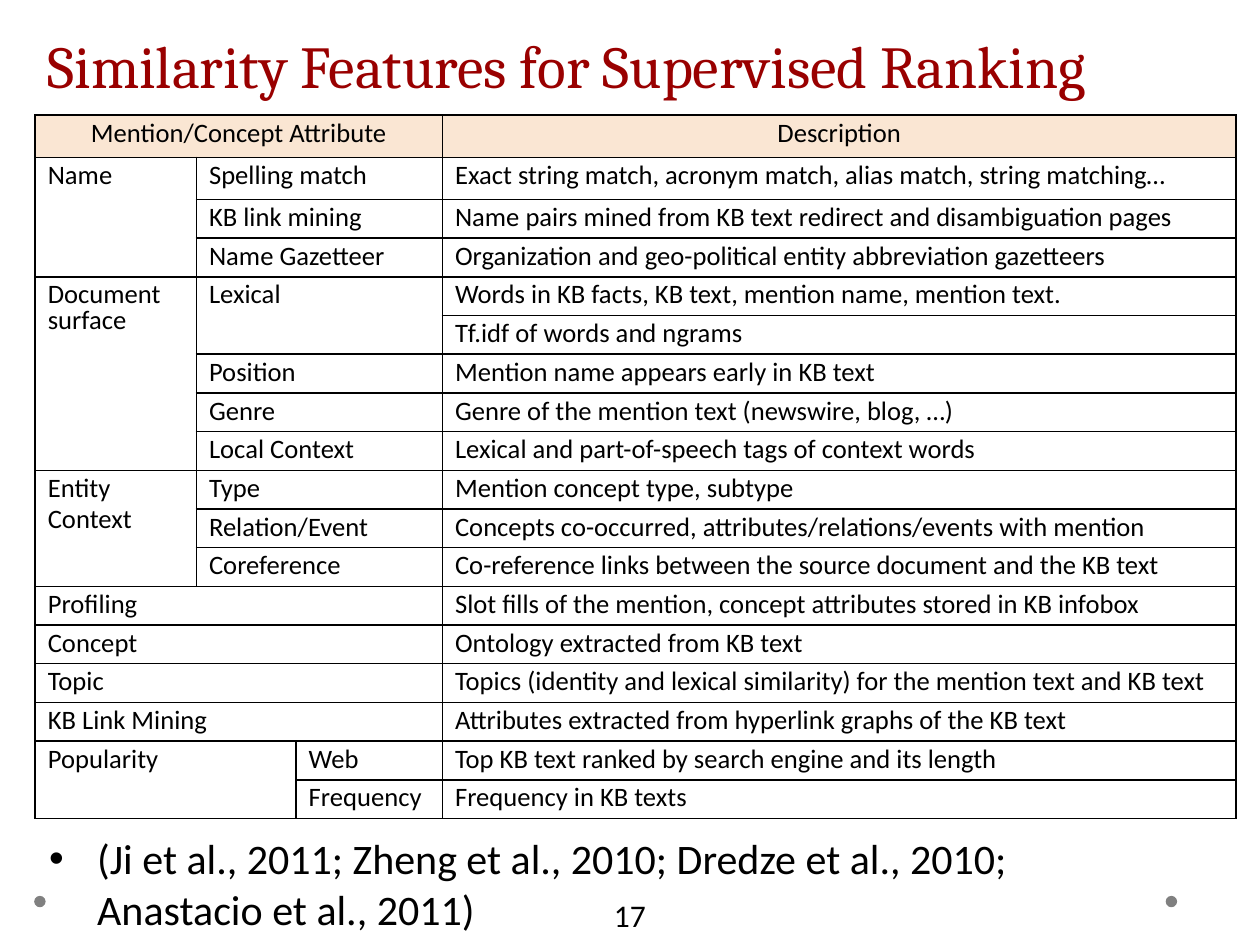
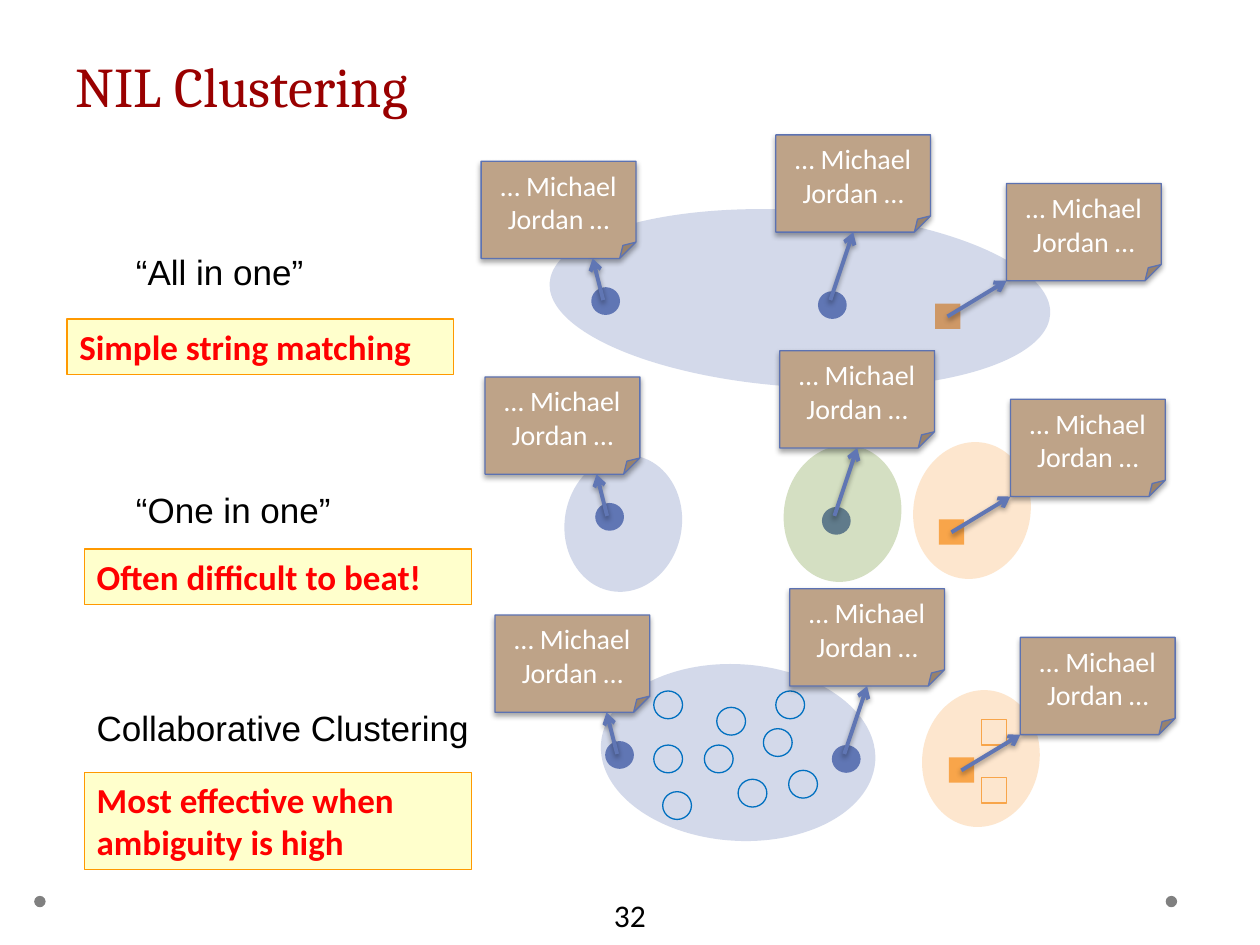
from dataclasses import dataclass
from itertools import takewhile

from lxml.etree import SubElement
from pptx import Presentation
from pptx.dml.color import RGBColor
from pptx.enum.shapes import MSO_CONNECTOR as Connector, MSO_SHAPE as Shape
from pptx.enum.text import MSO_ANCHOR as Anchor, MSO_AUTO_SIZE as AutoSize, PP_ALIGN as Align
from pptx.oxml.ns import qn
from pptx.util import Cm, Pt


@dataclass(frozen=True)
class Theme:
    title_font: str = "Cambria"
    body_font: str = "Calibri"
    label_font: str = "Arial"
    title: str = "990000"
    text: str = "000000"
    paper: str = "FFFFFF"
    dot: str = "808080"
    header: str = "FAE6D3"
    blue: str = "6076B4"
    orange: str = "F8A54A"
    green: str = "63891F"
    hollow: str = "0070C0"
    note: str = "BEA388"
    note_line: str = "5C72B2"
    callout: str = "FFFFCC"
    callout_line: str = "FF9900"
    callout_text: str = "FF0000"
    table_size: float = 15.2
    note_size: int = 16
    number_size: int = 18
    label_size: int = 20
    citation_size: int = 24
    thin: float = 0.75


THEME = Theme()
LEFT, UP = "<", "^"  # the cell joins its left or upper neighbour

FEATURES = [
    ("Mention/Concept Attribute", LEFT, LEFT, "Description"),
    ("Name", "Spelling match", LEFT, "Exact string match, acronym match, alias match, string matching…"),
    (UP, "KB link mining", LEFT, "Name pairs mined from KB text redirect and disambiguation pages"),
    (UP, "Name Gazetteer", LEFT, "Organization and geo-political entity abbreviation gazetteers"),
    ("Document surface", "Lexical", LEFT, "Words in KB facts, KB text, mention name, mention text."),
    (UP, UP, LEFT, "Tf.idf of words and ngrams"),
    (UP, "Position", LEFT, "Mention name appears early in KB text"),
    (UP, "Genre", LEFT, "Genre of the mention text (newswire, blog, …)"),
    (UP, "Local Context", LEFT, "Lexical and part-of-speech tags of context words"),
    ("Entity\nContext", "Type", LEFT, "Mention concept type, subtype"),
    (UP, "Relation/Event", LEFT, "Concepts co-occurred, attributes/relations/events with mention"),
    (UP, "Coreference", LEFT, "Co-reference links between the source document and the KB text"),
    ("Profiling", LEFT, LEFT, "Slot fills of the mention, concept attributes stored in KB infobox"),
    ("Concept", LEFT, LEFT, "Ontology extracted from KB text"),
    ("Topic", LEFT, LEFT, "Topics (identity and lexical similarity) for the mention text and KB text"),
    ("KB Link Mining", LEFT, LEFT, "Attributes extracted from hyperlink graphs of the KB text"),
    ("Popularity", LEFT, "Web", "Top KB text ranked by search engine and its length"),
    (UP, LEFT, "Frequency", "Frequency in KB texts"),
]
COLUMN_WIDTHS = (3.25, 2.01, 2.95, 16)

# Everything below is in cm from the top left corner of a scene.
NOTE_WIDTH, NOTE_HEIGHT = 3.12, 1.96
# note corner, arrow start, place of the arrow tip along the bottom of the note
NOTES = [
    ((0, 0.53), (2.46, 3.33), 0.72),
    ((5.94, 0), (7.04, 3.33), 0.5),
    ((10.59, 0.98), (9.4, 3.66), 0),
]
CIRCLE, SQUARE = (Shape.OVAL, 0.58, 0.56), (Shape.RECTANGLE, 0.51, 0.51)
MENTIONS = [
    (CIRCLE, (2.22, 3.07), THEME.blue),
    (CIRCLE, (6.79, 3.15), THEME.blue),
    (SQUARE, (9.15, 3.4), THEME.orange),
]
SMALL = (2.77, 2.36, 280.1)  # width, height, rotation of a one-entity cluster
ALL_IN_ONE = [((1.37, 1.52), (10.11, 3.56, 3.6), THEME.blue)]
ONE_IN_ONE = [
    ((8.43, 2.04), SMALL, THEME.orange),
    ((5.82, 2.1), SMALL, THEME.green),
    ((1.4, 2.3), SMALL, THEME.blue),
]
COLLABORATIVE = [
    ((8.41, 2.24), SMALL, THEME.orange),
    ((2.13, 1.52), (5.54, 3.56, 3.6), THEME.blue),
]
OTHER_CIRCLES = [(3.2, 2.06), (4.22, 3.15), (4.47, 2.39), (3.2, 3.15), (4.9, 3.84),
                 (5.41, 2.82), (5.66, 2.06), (5.92, 3.66), (3.38, 4.09)]
OTHER_SQUARES = [(9.8, 3.81), (9.8, 2.64)]
COLLABORATORS = ([(CIRCLE, place, THEME.hollow) for place in OTHER_CIRCLES]
                 + [(SQUARE, place, THEME.orange) for place in OTHER_SQUARES])


def rgb(color):
    return RGBColor.from_string(color)


def lengths(*values):
    return [Cm(value) for value in values]


def style_text(text_frame, size, font=THEME.body_font, color=THEME.text, bold=False, align=Align.LEFT):
    for paragraph in text_frame.paragraphs:
        paragraph.alignment = align
        for run in paragraph.runs:
            run.font.name, run.font.size, run.font.bold = font, Pt(size), bold
            run.font.color.rgb = rgb(color)


def add_figure(slide, kind, box, fill=None, line=None):
    shape = slide.shapes.add_shape(kind, *lengths(*box))
    shape.shadow.inherit = False
    if fill:
        shape.fill.solid()
        shape.fill.fore_color.rgb = rgb(fill)
    else:
        shape.fill.background()
    if line:
        shape.line.color.rgb = rgb(line)
        shape.line.width = Pt(THEME.thin)
    else:
        shape.line.fill.background()
    return shape


def add_text(slide, text, box, size, wrap=True, **style):
    text_frame = slide.shapes.add_textbox(*lengths(*box)).text_frame
    text_frame.word_wrap = wrap
    text_frame.text = text
    style_text(text_frame, size, **style)
    return text_frame


def drop_shadow(effects, distance, alpha):
    shadow = SubElement(effects, qn("a:outerShdw"), blurRad="40000", dist=str(distance),
                        dir="5400000", rotWithShape="0")
    color = SubElement(shadow, qn("a:srgbClr"), val="000000")
    SubElement(color, qn("a:alpha"), val=str(alpha * 1000))


def start_slide(presentation, title, title_box, title_size, number):
    """Add a slide with its title, the two corner dots and the page number."""
    slide = presentation.slides.add_slide(presentation.slide_layouts[5])
    placeholder = slide.shapes.title
    placeholder.left, placeholder.top, placeholder.width, placeholder.height = lengths(*title_box)
    text_frame = placeholder.text_frame
    text_frame.text = title
    text_frame.auto_size = AutoSize.NONE
    text_frame.vertical_anchor = Anchor.MIDDLE
    text_frame.paragraphs[0].line_spacing = Pt(58)
    style_text(text_frame, title_size, THEME.title_font, THEME.title)
    for left in (23.5, 0.69):
        add_figure(slide, Shape.OVAL, (left, 18.06, 0.23, 0.23), THEME.dot)
    add_text(slide, str(number), (11.43, 17.93, 2.54, 0.64), THEME.number_size, align=Align.CENTER)
    return slide


def add_borders(cell):
    properties = cell._tc.get_or_add_tcPr()
    for side in ("lnL", "lnR", "lnT", "lnB"):
        border = SubElement(properties, qn(f"a:{side}"), w=str(Pt(1)))
        fill = SubElement(border, qn("a:solidFill"))
        SubElement(fill, qn("a:srgbClr"), val=THEME.text)


def fill_cell(cell, text, header):
    cell.text = text
    style_text(cell.text_frame, THEME.table_size, align=Align.CENTER if header else Align.LEFT)
    for index, paragraph in enumerate(cell.text_frame.paragraphs):
        paragraph.line_spacing = 0.8
        if index:
            paragraph.space_before = Pt(3)


def merge_cell(table, row, column):
    """Join the cell with the LEFT and UP marks that follow it."""
    across = takewhile(lambda mark: mark == LEFT, FEATURES[row][column + 1:])
    down = takewhile(lambda cells: cells[column] == UP, FEATURES[row + 1:])
    last = table.cell(row + len(list(down)), column + len(list(across)))
    if last is not table.cell(row, column):
        table.cell(row, column).merge(last)


def add_feature_table(slide, left, top):
    tall, low = 0.85, 0.78
    heights = [tall] * 2 + [low] * (len(FEATURES) - 2)
    frame = slide.shapes.add_table(len(FEATURES), len(COLUMN_WIDTHS),
                                   *lengths(left, top, sum(COLUMN_WIDTHS), sum(heights)))
    table = frame.table
    table.first_row = table.horz_banding = False
    for column, width in zip(table.columns, COLUMN_WIDTHS):
        column.width = Cm(width)
    for row, (cells, height) in enumerate(zip(FEATURES, heights)):
        table.rows[row].height = Cm(height)
        for column, text in enumerate(cells):
            cell = table.cell(row, column)
            add_borders(cell)
            cell.fill.solid()
            cell.fill.fore_color.rgb = rgb(THEME.paper if row else THEME.header)
            if text not in (LEFT, UP):
                fill_cell(cell, text, header=row == 0)
                merge_cell(table, row, column)


def add_citation(slide, text, box):
    text_frame = add_text(slide, text, box, THEME.citation_size)
    properties = text_frame.paragraphs[0]._p.get_or_add_pPr()
    indent = Cm(0.97)
    properties.set("marL", str(indent))
    properties.set("indent", str(-indent))
    SubElement(properties, qn("a:buFont"), typeface="Arial")
    SubElement(properties, qn("a:buChar"), char="•")


def add_clusters(slide, left, top, clusters):
    for (x, y), (width, height, rotation), color in clusters:
        cluster = add_figure(slide, Shape.OVAL, (left + x, top + y, width, height), color)
        cluster.rotation = rotation
        color_element = cluster._element.spPr.find(qn("a:solidFill"))[0]
        SubElement(color_element, qn("a:alpha"), val="27000")


def add_markers(slide, left, top, markers, hollow=False):
    for (kind, width, height), (x, y), color in markers:
        paint = {"line" if hollow else "fill": color}
        add_figure(slide, kind, (left + x, top + y, width, height), **paint)


def add_note(slide, left, top):
    note = add_figure(slide, Shape.FOLDED_CORNER, (left, top, NOTE_WIDTH, NOTE_HEIGHT),
                      THEME.note, THEME.note_line)
    drop_shadow(note._element.spPr.find(qn("a:effectLst")), 23000, 35)
    note.text_frame.text = "… Michael Jordan …"
    note.text_frame.vertical_anchor = Anchor.MIDDLE
    style_text(note.text_frame, THEME.note_size, color=THEME.paper, align=Align.CENTER)
    return note


def add_arrow(slide, start, end):
    arrow = slide.shapes.add_connector(Connector.STRAIGHT, *lengths(*start, *end))
    arrow.line.color.rgb = rgb(THEME.blue)
    arrow.line.width = Pt(2.25)
    SubElement(arrow.line._get_or_add_ln(), qn("a:tailEnd"), type="arrow")
    drop_shadow(SubElement(arrow._element.spPr, qn("a:effectLst")), 20000, 38)
    return arrow


def add_scene(slide, left, top, clusters, collaborators=()):
    """Draw one clustering of the three mentions, with their notes."""
    if collaborators:
        add_clusters(slide, left, top, clusters)
        add_markers(slide, left, top, collaborators, hollow=True)
    add_markers(slide, left, top, MENTIONS)
    if not collaborators:
        add_clusters(slide, left, top, clusters)
    notes = [add_note(slide, left + x, top + y) for (x, y), _, _ in NOTES]
    for note, ((x, y), start, share) in zip(notes, NOTES):
        tip = (left + x + share * NOTE_WIDTH, top + y + NOTE_HEIGHT)
        arrow = add_arrow(slide, (left + start[0], top + start[1]), tip)
        if share == 0.5:
            arrow.end_connect(note, 2)


def add_callout(slide, text, left, top, height=1.12):
    callout = add_figure(slide, Shape.RECTANGLE, (left, top, 7.8, height),
                         THEME.callout, THEME.callout_line)
    callout.text_frame.text = text
    callout.text_frame.vertical_anchor = Anchor.TOP
    style_text(callout.text_frame, THEME.label_size, color=THEME.callout_text, bold=True)


def build_features_slide(presentation):
    slide = start_slide(presentation, "Similarity Features for Supervised Ranking",
                        (0.71, -0.36, 24.69, 2.72), 34, 17)
    add_feature_table(slide, 0.71, 2.32)
    add_citation(slide, "(Ji et al., 2011; Zheng et al., 2010; Dredze et al., 2010; Anastacio et al., 2011)",
                 (0.74, 16.66, 22.86, 1.27))


def build_clustering_slide(presentation):
    slide = start_slide(presentation, "NIL Clustering", (1.27, 0, 22.86, 2.72), 32, 32)
    add_scene(slide, 9.7, 2.72, ALL_IN_ONE)
    add_scene(slide, 9.78, 7.07, ONE_IN_ONE)
    add_scene(slide, 9.98, 11.87, COLLABORATIVE, COLLABORATORS)
    for text, left, top, width in [("“All in one”", 2.49, 4.93, 3.91),
                                   ("“One in one”", 2.49, 9.73, 4.47),
                                   ("Collaborative Clustering", 1.7, 14.12, 8.03)]:
        add_text(slide, text, (left, top, width, 1.12), THEME.label_size, wrap=False,
                 font=THEME.label_font)
    add_callout(slide, "Simple string matching", 1.35, 6.43)
    add_callout(slide, "Often difficult to beat!", 1.7, 11.07)
    add_callout(slide, "Most effective when ambiguity is high", 1.7, 15.57, 1.96)


def main():
    presentation = Presentation()
    presentation.slide_width, presentation.slide_height = lengths(25.4, 19.05)
    build_features_slide(presentation)
    build_clustering_slide(presentation)
    presentation.save("out.pptx")


if __name__ == "__main__":
    main()
